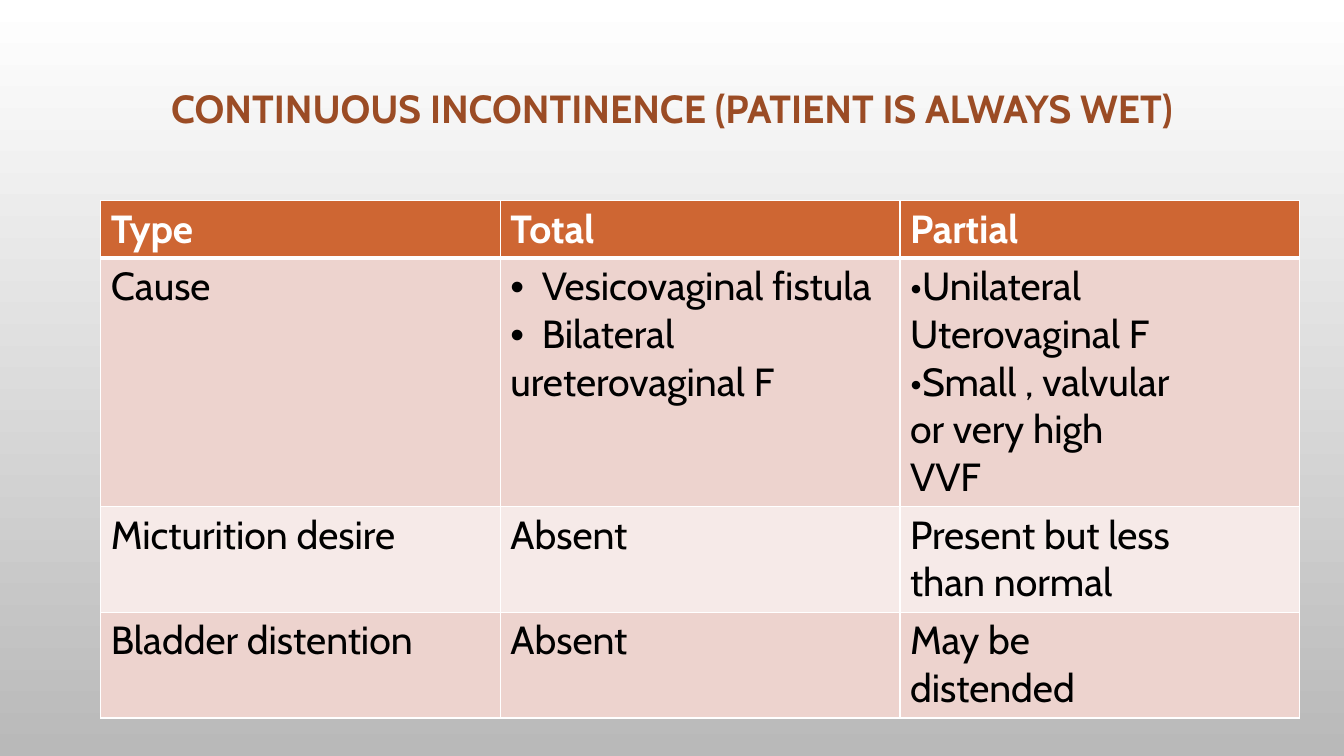
from lxml.etree import SubElement
from pptx import Presentation
from pptx.dml.color import RGBColor
from pptx.enum.text import MSO_ANCHOR, PP_ALIGN
from pptx.oxml import parse_xml
from pptx.oxml.ns import nsdecls, qn
from pptx.util import Cm, Pt

TITLE = "CONTINUOUS INCONTINENCE (PATIENT IS ALWAYS WET)"
# Each cell is a list of lines; a pair marks a bulleted line.
ROWS = [
    [["Type"], ["Total"], ["Partial"]],
    [["Cause"],
     [("•", "Vesicovaginal fistula"), ("•", "Bilateral"), "ureterovaginal F"],
     ["•Unilateral", "Uterovaginal F", "•Small , valvular", "or very high", "VVF"]],
    [["Micturition desire"], ["Absent"], ["Present but less", "than normal"]],
    [["Bladder distention"], ["Absent"], ["May be", "distended"]],
]
HEIGHTS = [Cm(1.42), Cm(6.22), Cm(2.67), Cm(2.67)]
WIDTH = Cm(10.07)
INDENT = Cm(0.79)

FONT = "Cabin"
SIZE = Pt(28)
WHITE = RGBColor(0xFF, 0xFF, 0xFF)
BLACK = RGBColor(0, 0, 0)
GRAY = RGBColor(0xB9, 0xB9, 0xB9)
BROWN = RGBColor(0x9B, 0x4C, 0x25)
ORANGE = RGBColor(0xCE, 0x66, 0x33)
ROSE = RGBColor(0xED, 0xD3, 0xCE)
PALE = RGBColor(0xF6, 0xEA, 0xE8)


def add_run(para, text, color, bold):
    run = para.add_run()
    run.text = text
    font = run.font
    font.name, font.size, font.bold = FONT, SIZE, bold
    font.color.rgb = color


def set_bullet(para, mark):
    props = para._p.get_or_add_pPr()
    props.set("marL", str(INDENT))
    props.set("indent", str(-INDENT))
    SubElement(props, qn("a:buFont")).set("typeface", "Arial")
    SubElement(props, qn("a:buChar")).set("char", mark)


def set_edges(cell, top, bottom):
    """Draw white cell borders; top and bottom are widths in points."""
    props = cell._tc.get_or_add_tcPr()
    sides = [("L", 1), ("R", 1), ("T", top), ("B", bottom)]
    for pos, (side, width) in enumerate(sides):
        props.insert(pos, parse_xml(
            f'<a:ln{side} {nsdecls("a")} w="{Pt(width)}"><a:solidFill>'
            f'<a:srgbClr val="{WHITE}"/></a:solidFill></a:ln{side}>'))


def fill_cell(cell, lines, row):
    head = row == 0
    cell.fill.solid()
    cell.fill.fore_color.rgb = ORANGE if head else ROSE if row % 2 else PALE
    set_edges(cell, 3 if row == 1 else 1, 3 if head else 1)
    frame = cell.text_frame
    for num, line in enumerate(lines):
        para = frame.add_paragraph() if num else frame.paragraphs[0]
        if isinstance(line, tuple):
            mark, line = line
            set_bullet(para, mark)
        add_run(para, line, WHITE if head else BLACK, head)


def main():
    deck = Presentation()
    deck.slide_width, deck.slide_height = Cm(33.87), Cm(19.05)
    slide = deck.slides.add_slide(deck.slide_layouts[5])

    back = slide.background.fill
    back.gradient()
    back.gradient_angle = 270
    for stop, color in zip(back.gradient_stops, (WHITE, GRAY)):
        stop.color.rgb = color

    title = slide.shapes.title
    title.left, title.top = Cm(2.54), Cm(1.73)
    title.width, title.height = Cm(28.78), Cm(2.11)
    title.text_frame.vertical_anchor = MSO_ANCHOR.MIDDLE
    para = title.text_frame.paragraphs[0]
    para.alignment = PP_ALIGN.CENTER
    para.line_spacing = 0.9
    add_run(para, TITLE, BROWN, True)

    count = len(ROWS[0])
    table = slide.shapes.add_table(
        len(ROWS), count, Cm(2.54), Cm(5.05), WIDTH * count, sum(HEIGHTS)).table
    for col in table.columns:
        col.width = WIDTH
    for row, cells in enumerate(ROWS):
        table.rows[row].height = HEIGHTS[row]
        for col, lines in enumerate(cells):
            fill_cell(table.cell(row, col), lines, row)

    deck.save("out.pptx")


if __name__ == "__main__":
    main()
